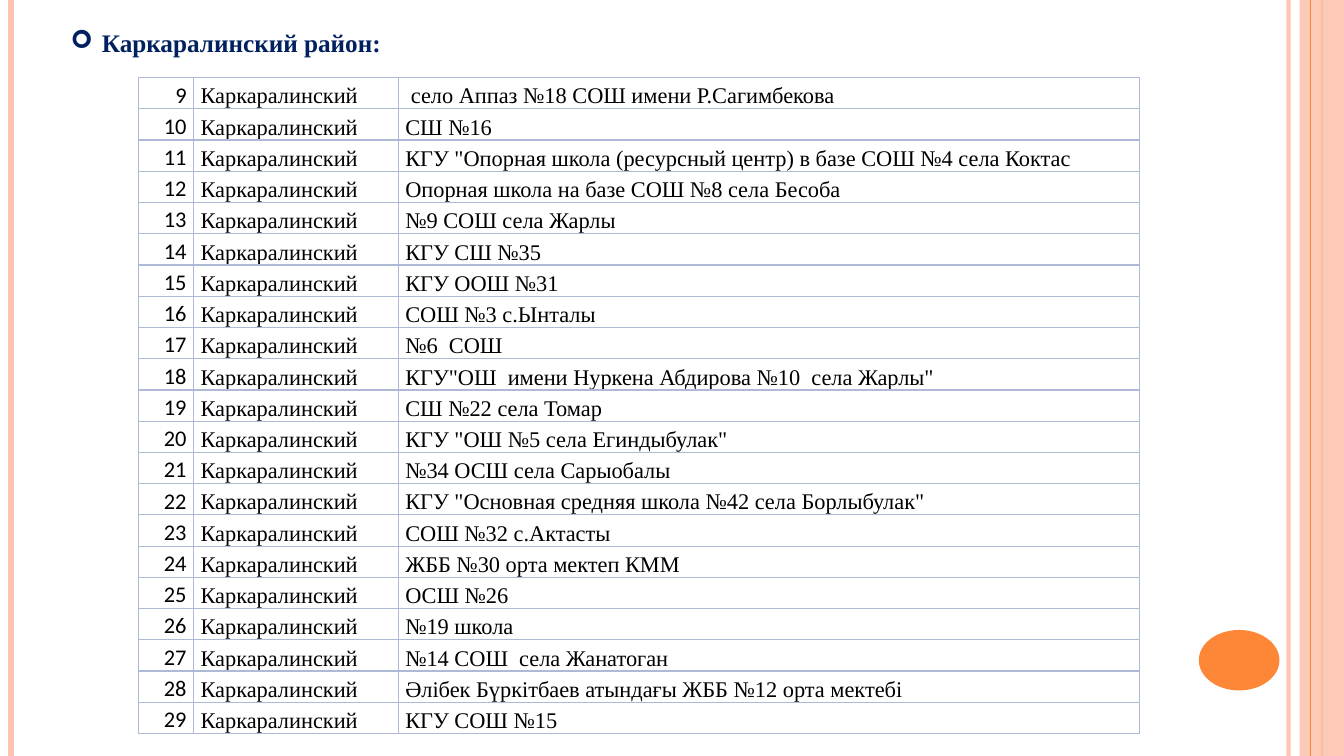
from pptx import Presentation
from pptx.dml.color import RGBColor
from pptx.enum.shapes import MSO_CONNECTOR as Connector, MSO_SHAPE as Shape
from pptx.enum.text import MSO_ANCHOR as Anchor, MSO_AUTO_SIZE as AutoSize, PP_ALIGN as Align
from pptx.oxml import parse_xml
from pptx.oxml.ns import nsdecls, qn
from pptx.util import Inches, Pt

HEADING = "Каркаралинский район:"
DISTRICT = "Каркаралинский"
FIRST_NUMBER = 9
SCHOOLS = [
    " село Аппаз №18 СОШ имени Р.Сагимбекова",
    "СШ №16",
    'КГУ "Опорная школа (ресурсный центр) в базе СОШ №4 села Коктас',
    "Опорная школа на базе СОШ №8 села Бесоба",
    "№9 СОШ села Жарлы",
    "КГУ СШ №35",
    "КГУ ООШ №31",
    "СОШ №3 с.Ынталы",
    "№6  СОШ",
    'КГУ"ОШ  имени Нуркена Абдирова №10  села Жарлы"',
    "СШ №22 села Томар",
    'КГУ "ОШ №5 села Егиндыбулак"',
    "№34 ОСШ села Сарыобалы",
    'КГУ "Основная средняя школа №42 села Борлыбулак"',
    "СОШ №32 с.Актасты",
    "ЖББ №30 орта мектеп КММ",
    "ОСШ №26",
    "№19 школа",
    "№14 СОШ  села Жанатоган",
    "Әлібек Бүркітбаев атындағы ЖББ №12 орта мектебі",
    "КГУ CОШ №15",
]

THEME = {
    "peach": "FEC3AE", "orange": "FE8637", "navy": "002060",
    "black": "000000", "grid": "AEBAD5",
    "heading_size": 18, "cell_size": 16,
    "serif": "Times New Roman", "sans": "Calibri",
}
SLIDE_WIDTH, SLIDE_HEIGHT = 13.33, 7.5
BACK_RULES = [(12.78, "peach", 3, 93), (0.11, "peach", 4.5, 100), (13.11, "orange", 1.5, 100)]
FRONT_RULES = [(13, "orange", 0.75, 100)]
BAND = (12.89, 0, 0.44, SLIDE_HEIGHT)
BADGE = (11.89, 6.25, 0.8, 0.6)
HEADING_BOX = (0.6, 0.22, 3.31, 0.4)
TABLE_LEFT, TABLE_TOP, ROW_HEIGHT = 1.37, 0.77, 0.31
COLUMNS = [
    (0.55, "sans", Align.RIGHT),
    (2.03, "serif", Align.LEFT),
    (7.35, "serif", Align.LEFT),
]
CELL_FORMAT = {
    "vertical_anchor": Anchor.BOTTOM,
    "margin_left": Inches(0.07), "margin_right": Inches(0.07),
    "margin_top": 0, "margin_bottom": 0,
}
HEADING_FORMAT = {
    "word_wrap": False, "auto_size": AutoSize.SHAPE_TO_FIT_TEXT, "vertical_anchor": Anchor.TOP,
    "margin_left": Inches(0.1), "margin_right": Inches(0.1),
    "margin_top": Inches(0.05), "margin_bottom": Inches(0.05),
}


def color(name):
    return RGBColor.from_string(THEME[name])


def apply(target, formats):
    for attribute, value in formats.items():
        setattr(target, attribute, value)


def write(paragraph, text, size, font, ink, bold=False):
    run = paragraph.add_run()
    run.text = text
    apply(run.font, {"size": Pt(THEME[size]), "name": THEME[font], "bold": bold})
    run.font.color.rgb = color(ink)


def set_opacity(element, percent):
    if percent < 100:
        srgb = next(element.iter(qn("a:srgbClr")))
        srgb.append(parse_xml(f'<a:alpha {nsdecls("a")} val="{percent * 1000}"/>'))


def draw_rules(slide, rules):
    for x, ink, width, opacity in rules:
        rule = slide.shapes.add_connector(
            Connector.STRAIGHT, Inches(x), 0, Inches(x), Inches(SLIDE_HEIGHT))
        rule.line.color.rgb = color(ink)
        rule.line.width = Pt(width)
        properties = rule.element.spPr
        set_opacity(properties, opacity)
        properties.append(parse_xml(f'<a:effectLst {nsdecls("a")}/>'))


def draw_solid(slide, kind, box, ink, opacity=100):
    solid = slide.shapes.add_shape(kind, *map(Inches, box))
    solid.shadow.inherit = False
    solid.fill.solid()
    solid.fill.fore_color.rgb = color(ink)
    solid.line.fill.background()
    set_opacity(solid.element.spPr, opacity)


def draw_heading(slide):
    heading = slide.shapes.title
    apply(heading, dict(zip(("left", "top", "width", "height"), map(Inches, HEADING_BOX))))
    apply(heading.text_frame, HEADING_FORMAT)
    paragraph = heading.text_frame.paragraphs[0]
    paragraph.alignment = Align.LEFT
    write(paragraph, HEADING, "heading_size", "serif", "navy", True)
    properties = paragraph._p.get_or_add_pPr()
    properties.set("marL", str(Inches(0.31)))
    properties.set("indent", str(-Inches(0.31)))
    properties.append(parse_xml(f'<a:buFont {nsdecls("a")} typeface="Wingdings"/>'))
    properties.append(parse_xml(f'<a:buChar {nsdecls("a")} char="➢"/>'))


def draw_borders(frame):
    for properties in frame.element.iter(qn("a:tcPr")):
        for position, side in enumerate(("lnL", "lnR", "lnT", "lnB")):
            properties.insert(position, parse_xml(
                f'<a:{side} {nsdecls("a")} w="{Pt(1)}"><a:solidFill>'
                f'<a:srgbClr val="{THEME["grid"]}"/></a:solidFill></a:{side}>'))


def draw_schools(slide):
    total_width = sum(width for width, _, _ in COLUMNS)
    frame = slide.shapes.add_table(
        len(SCHOOLS), len(COLUMNS), Inches(TABLE_LEFT), Inches(TABLE_TOP),
        Inches(total_width), Inches(ROW_HEIGHT * len(SCHOOLS)))
    table = frame.table
    apply(table, {"first_row": False, "horz_banding": False})
    for column, (width, _, _) in zip(table.columns, COLUMNS):
        column.width = Inches(width)
    for number, (row, school) in enumerate(zip(table.rows, SCHOOLS), FIRST_NUMBER):
        row.height = Inches(ROW_HEIGHT)
        texts = (str(number), DISTRICT, school)
        for cell, text, (_, font, alignment) in zip(row.cells, texts, COLUMNS):
            apply(cell, CELL_FORMAT)
            cell.fill.background()
            paragraph = cell.text_frame.paragraphs[0]
            apply(paragraph, {"alignment": alignment, "line_spacing": 1.15})
            write(paragraph, text, "cell_size", font, "black")
    draw_borders(frame)


def main():
    deck = Presentation()
    apply(deck, {"slide_width": Inches(SLIDE_WIDTH), "slide_height": Inches(SLIDE_HEIGHT)})
    slide = deck.slides.add_slide(deck.slide_layouts[5])
    draw_rules(slide, BACK_RULES)
    draw_solid(slide, Shape.RECTANGLE, BAND, "peach", 87)
    draw_rules(slide, FRONT_RULES)
    draw_solid(slide, Shape.OVAL, BADGE, "orange")
    draw_schools(slide)
    draw_heading(slide)
    deck.save("out.pptx")


if __name__ == "__main__":
    main()
